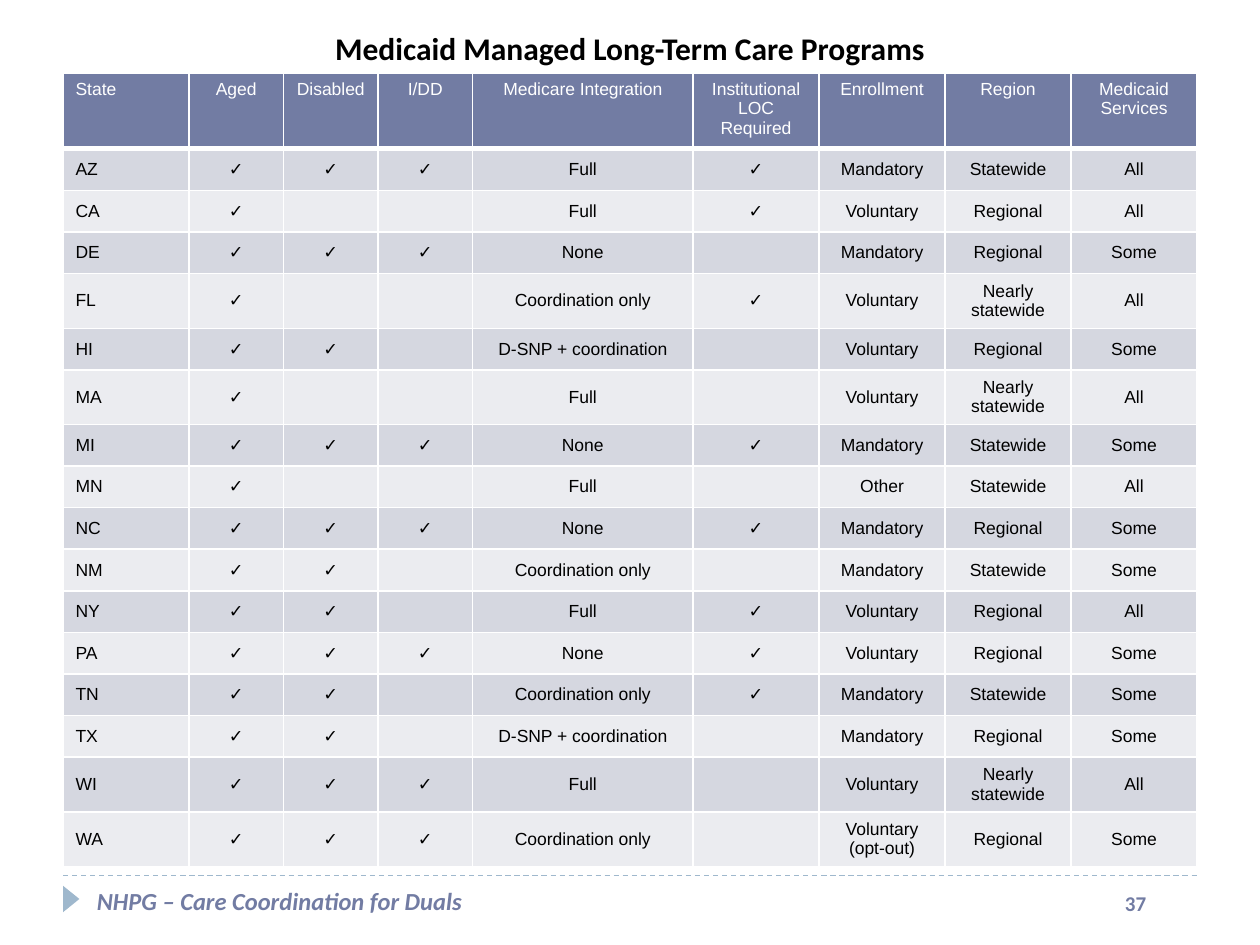
from lxml.etree import SubElement
from pptx import Presentation
from pptx.dml.color import RGBColor
from pptx.enum.dml import MSO_LINE
from pptx.enum.shapes import MSO_CONNECTOR, MSO_SHAPE
from pptx.enum.text import MSO_ANCHOR, PP_ALIGN
from pptx.oxml import parse_xml
from pptx.oxml.ns import nsdecls, qn
from pptx.util import Inches, Pt

COLUMN_WIDTHS = [1, 0.75, 0.75, 0.75, 1.75, 1, 1, 1, 1]
ROW_HEIGHT = 0.33
HEADERS = ["State", "Aged", "Disabled", "I/DD", "Medicare Integration",
           "Institutional LOC Required", "Enrollment", "Region", "Medicaid Services"]
YES, NO = "✓", ""
PROGRAMS = [
    ["AZ", YES, YES, YES, "Full", YES, "Mandatory", "Statewide", "All"],
    ["CA", YES, NO, NO, "Full", YES, "Voluntary", "Regional", "All"],
    ["DE", YES, YES, YES, "None", NO, "Mandatory", "Regional", "Some"],
    ["FL", YES, NO, NO, "Coordination only", YES, "Voluntary", "Nearly statewide", "All"],
    ["HI", YES, YES, NO, "D-SNP + coordination", NO, "Voluntary", "Regional", "Some"],
    ["MA", YES, NO, NO, "Full", NO, "Voluntary", "Nearly statewide", "All"],
    ["MI", YES, YES, YES, "None", YES, "Mandatory", "Statewide", "Some"],
    ["MN", YES, NO, NO, "Full", NO, "Other", "Statewide", "All"],
    ["NC", YES, YES, YES, "None", YES, "Mandatory", "Regional", "Some"],
    ["NM", YES, YES, NO, "Coordination only", NO, "Mandatory", "Statewide", "Some"],
    ["NY", YES, YES, NO, "Full", YES, "Voluntary", "Regional", "All"],
    ["PA", YES, YES, YES, "None", YES, "Voluntary", "Regional", "Some"],
    ["TN", YES, YES, NO, "Coordination only", YES, "Mandatory", "Statewide", "Some"],
    ["TX", YES, YES, NO, "D-SNP + coordination", NO, "Mandatory", "Regional", "Some"],
    ["WI", YES, YES, YES, "Full", NO, "Voluntary", "Nearly statewide", "All"],
    ["WA", YES, YES, YES, "Coordination only", NO, "Voluntary\n(opt-out)", "Regional", "Some"],
]


def color(hex_string):
    return RGBColor.from_string(hex_string)


class SlideBuilder:
    heading_font = "Calibri"
    body_font = "Arial"
    accent = "727CA3"
    light_accent = "9FB8CD"
    bands = ["EBECF0", "D5D7E0"]
    white = "FFFFFF"
    black = "000000"

    def __init__(self, presentation):
        self.slide = presentation.slides.add_slide(presentation.slide_layouts[5])

    def format_text(self, text_frame, name, size, hex_color, align, bold=False, italic=False):
        for paragraph in text_frame.paragraphs:
            paragraph.alignment = align
            font = paragraph.font
            font.name, font.size = name, Pt(size)
            font.bold, font.italic = bold, italic
            font.color.rgb = color(hex_color)

    def title(self, text, left, top, width, height):
        shape = self.slide.shapes.title
        shape.left, shape.top = Inches(left), Inches(top)
        shape.width, shape.height = Inches(width), Inches(height)
        shape.text_frame.text = text
        self.format_text(shape.text_frame, self.heading_font, 18, self.black,
                         PP_ALIGN.CENTER, bold=True)

    def text(self, text, left, top, width, height, size, italic=False):
        shape = self.slide.shapes.add_textbox(
            Inches(left), Inches(top), Inches(width), Inches(height))
        shape.text_frame.word_wrap = True
        shape.text_frame.text = text
        self.format_text(shape.text_frame, self.heading_font, size, self.accent,
                         PP_ALIGN.LEFT, bold=True, italic=italic)

    def dashed_line(self, left, right, top):
        connector = self.slide.shapes.add_connector(
            MSO_CONNECTOR.STRAIGHT, Inches(left), Inches(top), Inches(right), Inches(top))
        connector.line.color.rgb = color(self.light_accent)
        connector.line.width = Pt(0.75)
        connector.line.dash_style = MSO_LINE.DASH
        SubElement(connector._element.spPr, qn("a:effectLst"))

    def marker(self, left, top, width, height):
        shape = self.slide.shapes.add_shape(
            MSO_SHAPE.ISOSCELES_TRIANGLE,
            Inches(left), Inches(top), Inches(width), Inches(height))
        shape.rotation = 90
        shape.shadow.inherit = False
        shape.fill.solid()
        shape.fill.fore_color.rgb = color(self.light_accent)
        shape.line.fill.background()

    def borders(self, cell, top_width, bottom_width):
        properties = cell._tc.get_or_add_tcPr()
        widths = {"lnL": 1, "lnR": 1, "lnT": top_width, "lnB": bottom_width}
        for position, (side, width) in enumerate(widths.items()):
            properties.insert(position, parse_xml(
                f'<a:{side} {nsdecls("a")} w="{Pt(width)}"><a:solidFill>'
                f'<a:srgbClr val="{self.white}"/></a:solidFill></a:{side}>'))

    def cell(self, cell, text, row_index, column_index):
        is_header = row_index == 0
        cell.text = text
        cell.vertical_anchor = MSO_ANCHOR.TOP if is_header else MSO_ANCHOR.MIDDLE
        self.format_text(cell.text_frame, self.body_font, 10,
                         self.white if is_header else self.black,
                         PP_ALIGN.CENTER if column_index else PP_ALIGN.LEFT)
        if not text:
            SubElement(cell.text_frame.paragraphs[0]._p, qn("a:endParaRPr"), sz="1000")
        cell.fill.solid()
        cell.fill.fore_color.rgb = color(self.accent if is_header else self.bands[row_index % 2])
        self.borders(cell, 3 if row_index == 1 else 1, 3 if is_header else 1)

    def table(self, rows, left, top):
        table = self.slide.shapes.add_table(
            len(rows), len(COLUMN_WIDTHS), Inches(left), Inches(top),
            Inches(sum(COLUMN_WIDTHS)), Inches(ROW_HEIGHT * len(rows))).table
        for column, width in zip(table.columns, COLUMN_WIDTHS):
            column.width = Inches(width)
        for row_index, values in enumerate(rows):
            table.rows[row_index].height = Inches(ROW_HEIGHT)
            for column_index, text in enumerate(values):
                self.cell(table.cell(row_index, column_index), text, row_index, column_index)


def main():
    presentation = Presentation()
    presentation.slide_width, presentation.slide_height = Inches(10), Inches(7.5)
    builder = SlideBuilder(presentation)
    builder.dashed_line(0.5, 9.5, 6.95)
    builder.marker(0.46, 7.07, 0.21, 0.13)
    builder.text("37", 8.83, 7.02, 0.58, 0.4, 12)
    builder.text("NHPG – Care Coordination for Duals", 0.67, 6.98, 4.5, 0.52, 14, italic=True)
    builder.table([HEADERS] + PROGRAMS, 0.5, 0.58)
    builder.title("Medicaid Managed Long-Term Care Programs", 0.54, 0.18, 8.92, 0.4)
    presentation.save("out.pptx")


if __name__ == "__main__":
    main()
